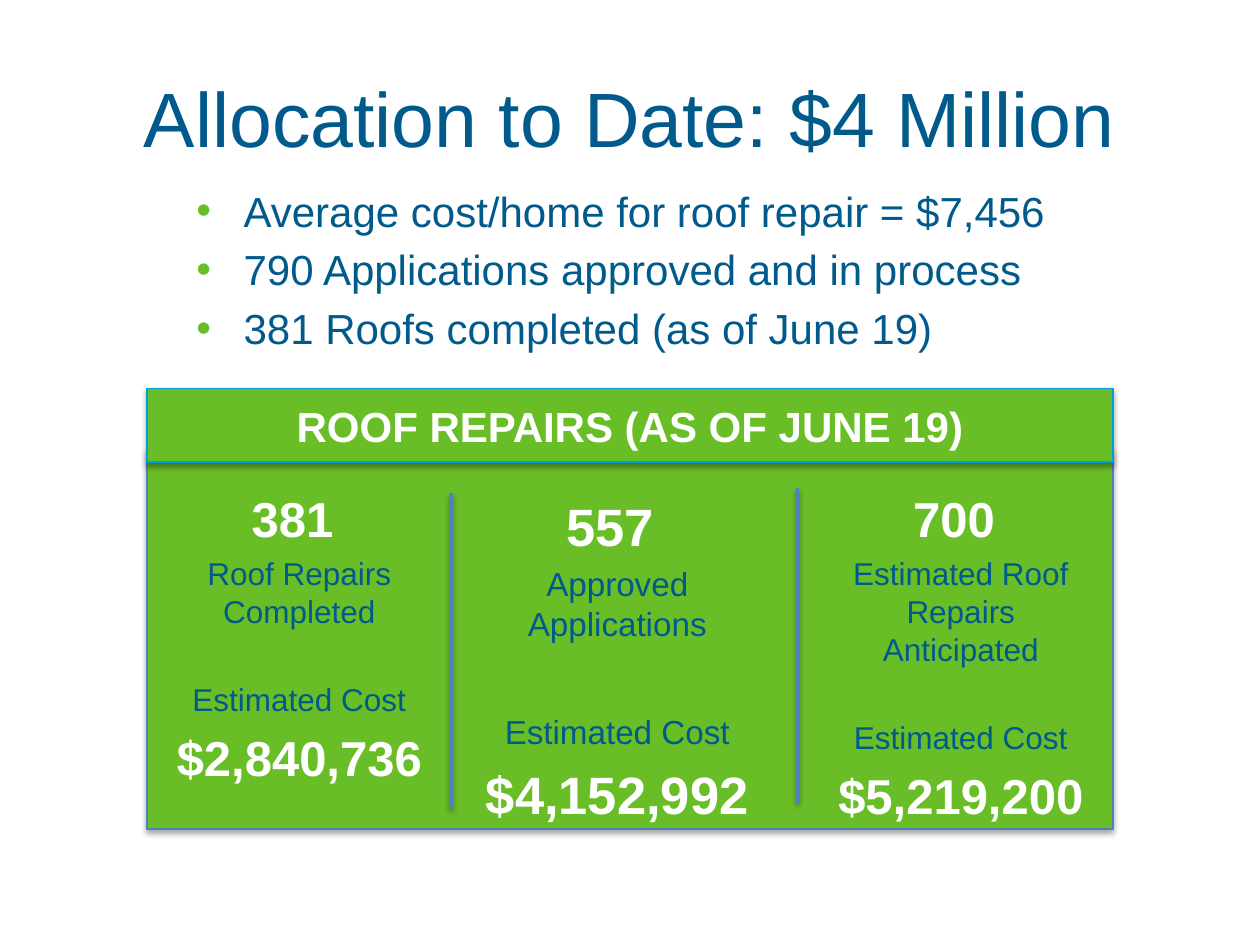
from lxml.etree import SubElement
from pptx import Presentation
from pptx.dml.color import RGBColor
from pptx.enum.shapes import MSO_CONNECTOR as Connector, MSO_SHAPE as Shape
from pptx.enum.text import MSO_ANCHOR as Anchor, PP_ALIGN as Align
from pptx.oxml.ns import qn
from pptx.util import Pt

TITLE = "Allocation to Date: $4 Million"
BULLETS = [
    "Average cost/home for roof repair = $7,456",
    "790 Applications approved and in process",
    "381 Roofs completed (as of June 19)",
]
HEADER = "ROOF REPAIRS (AS OF JUNE 19)"
COST_LABEL = "Estimated Cost"
# box (left, top, width, height), count, label, cost, figure size, label size, gap above cost
COLUMNS = [
    ((264.2, 278.6, 177.1, 195.1), "557 ", "Approved Applications", "$4,152,992", 30, 19, 39.2),
    ((468, 275.8, 162, 192.2), "700 ", "Estimated Roof Repairs Anticipated", "$5,219,200", 28, 18, 28.9),
    ((90, 275.8, 162, 192.2), "381 ", "Roof Repairs Completed", "$2,840,736", 28, 18, 28.9),
]
DIVIDERS = [(455.8, 278.6), (257.8, 282)]  # x, top
DIVIDER_HEIGHT = 180

PANEL_BOX = (84, 257, 552, 216.7)
HEADER_BOX = (84, 222, 552, 42)
TITLE_BOX = (36, 21.6, 648, 90)
BULLET_BOX = (105.1, 102.2, 509.8, 100.1)

THEME = {
    "font": "Arial", "blue": "005A8B", "green": "69BE28", "white": "FFFFFF",
    "edge": "4F81BD", "header_edge": "009FDA",
    "title": 44, "body": 24, "space_share": 0.2,
}


def color(name):
    return RGBColor.from_string(THEME[name])


def add_shadow(item, distance, opacity):
    """Cast a soft black shadow straight down."""
    effects = SubElement(item._element.spPr, qn("a:effectLst"))
    shadow = SubElement(effects, qn("a:outerShdw"), blurRad=str(Pt(3.1)), dist=str(Pt(distance)),
                        dir="5400000", rotWithShape="0")
    black = SubElement(shadow, qn("a:srgbClr"), val="000000")
    SubElement(black, qn("a:alpha"), val=str(opacity * 1000))


def add_span(para, text, size, ink, bold=False):
    span = para.add_run()
    span.text = text
    span.font.name = THEME["font"]
    span.font.size = Pt(size)
    span.font.bold = bold
    span.font.color.rgb = color(ink)


def add_text_box(page, box):
    frame = page.shapes.add_textbox(*map(Pt, box)).text_frame
    frame.word_wrap = True
    return frame


def add_rectangle(page, box, edge):
    rectangle = page.shapes.add_shape(Shape.RECTANGLE, *map(Pt, box))
    rectangle.fill.solid()
    rectangle.fill.fore_color.rgb = color("green")
    rectangle.line.color.rgb = color(edge)
    rectangle.line.width = Pt(0.75)
    add_shadow(rectangle, 1.8, 35)
    return rectangle


def add_centered_line(frame, text, size, ink, bold=False):
    frame.vertical_anchor = Anchor.MIDDLE
    para = frame.paragraphs[0]
    para.alignment = Align.CENTER
    add_span(para, text, size, ink, bold)


def add_bullets(page):
    frame = add_text_box(page, BULLET_BOX)
    size = THEME["body"]
    for index, text in enumerate(BULLETS):
        para = frame.paragraphs[0] if index == 0 else frame.add_paragraph()
        para.space_before = Pt(size * THEME["space_share"] if index else 0)
        properties = para._p.get_or_add_pPr()
        properties.set("marL", str(Pt(27)))
        properties.set("indent", str(Pt(-27)))
        bullet_color = SubElement(properties, qn("a:buClr"))
        SubElement(bullet_color, qn("a:srgbClr"), val=THEME["green"])
        SubElement(properties, qn("a:buFont"), typeface=THEME["font"])
        SubElement(properties, qn("a:buChar"), char="•")
        add_span(para, text, size, "blue")


def add_column(page, box, count, label, cost, figure_size, label_size, cost_gap):
    frame = add_text_box(page, box)
    share = THEME["space_share"]
    lines = [
        (count, figure_size, "white", True, 0),
        (label, label_size, "blue", False, label_size * share),
        (COST_LABEL, label_size, "blue", False, cost_gap),
        (cost, figure_size, "white", True, figure_size * share),
    ]
    for index, (text, size, ink, bold, gap) in enumerate(lines):
        para = frame.paragraphs[0] if index == 0 else frame.add_paragraph()
        para.alignment = Align.CENTER
        para.space_before = Pt(gap)
        add_span(para, text, size, ink, bold)


def add_divider(page, x, top):
    divider = page.shapes.add_connector(
        Connector.STRAIGHT, Pt(x), Pt(top), Pt(x), Pt(top + DIVIDER_HEIGHT))
    divider.line.color.rgb = color("edge")
    divider.line.width = Pt(2)
    add_shadow(divider, 1.6, 38)


def main():
    deck = Presentation()
    deck.slide_width, deck.slide_height = Pt(720), Pt(540)
    page = deck.slides.add_slide(deck.slide_layouts[6])
    add_rectangle(page, PANEL_BOX, "edge")
    add_centered_line(add_text_box(page, TITLE_BOX), TITLE, THEME["title"], "blue")
    add_bullets(page)
    header = add_rectangle(page, HEADER_BOX, "header_edge")
    add_centered_line(header.text_frame, HEADER, THEME["body"], "white", True)
    for column in COLUMNS:
        add_column(page, *column)
    for x, top in DIVIDERS:
        add_divider(page, x, top)
    deck.save("out.pptx")


if __name__ == "__main__":
    main()
